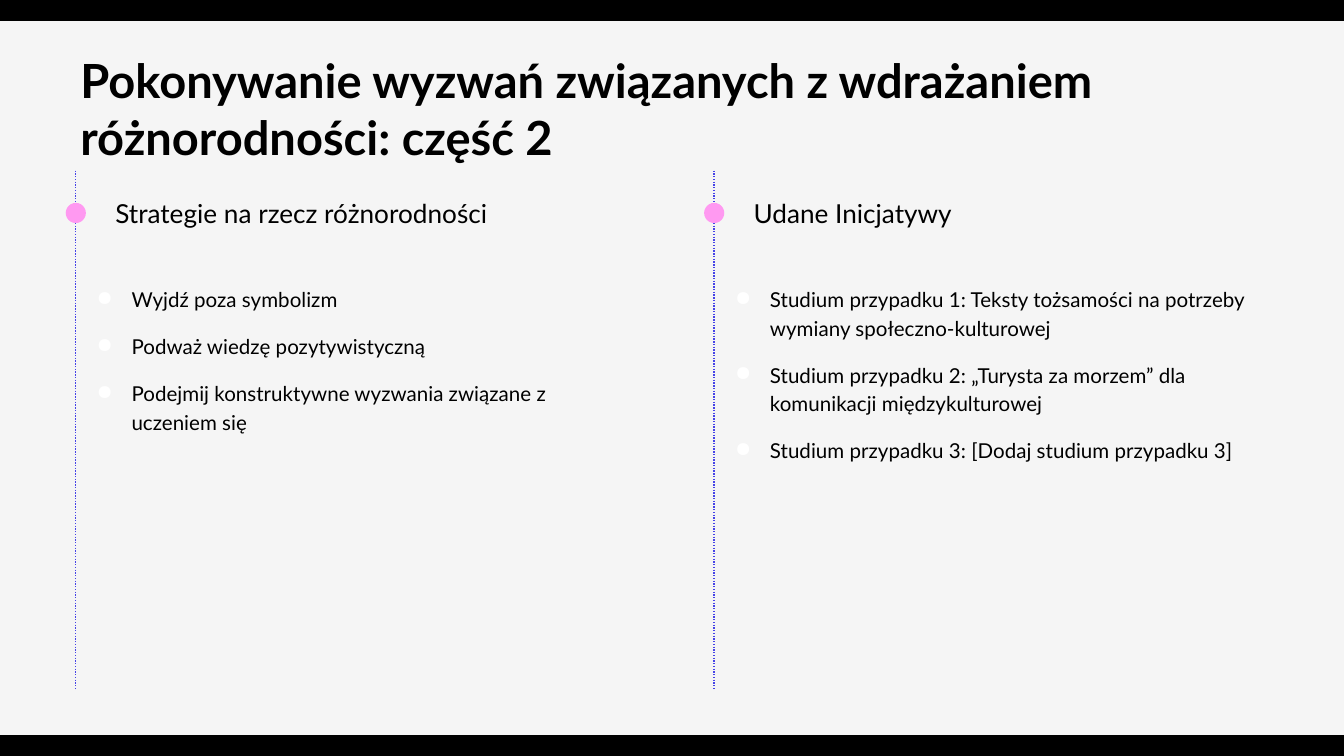
from lxml.etree import SubElement as Sub
from pptx import Presentation
from pptx.dml.color import RGBColor as RGB
from pptx.enum.dml import MSO_LINE as Dash
from pptx.enum.shapes import MSO_CONNECTOR as Conn, MSO_SHAPE as Form
from pptx.enum.text import MSO_ANCHOR as Anchor
from pptx.oxml.ns import qn
from pptx.util import Pt

hues = {"back": "000000", "panel": "FFFFFF", "text": "000000",
        "mark": "FFFFFF", "rule": "4643E7", "dot": "FF99F1"}
cols = [
    ("Strategie na rzecz różnorodności", [
        "Wyjdź poza symbolizm",
        "Podważ wiedzę pozytywistyczną",
        "Podejmij konstruktywne wyzwania związane z uczeniem się"]),
    ("Udane Inicjatywy", [
        "Studium przypadku 1: Teksty tożsamości na potrzeby wymiany społeczno-kulturowej",
        "Studium przypadku 2: „Turysta za morzem” dla komunikacji międzykulturowej",
        "Studium przypadku 3: [Dodaj studium przypadku 3]"]),
]


def add_text(box, lines, size, anchor, bold=False, list_on=False):
    frame = slide.shapes.add_textbox(*map(Pt, box)).text_frame
    look = {"word_wrap": True, "vertical_anchor": anchor}
    look.update({"margin_" + side: Pt(7.2) for side in ("left", "top", "right", "bottom")})
    for key, val in look.items():
        setattr(frame, key, val)
    for i, line in enumerate(lines):
        par = frame.paragraphs[0] if i == 0 else frame.add_paragraph()
        if list_on:
            par.line_spacing = 1.15
            par.space_before = Pt(10 if i else 0)
            props = par._p.get_or_add_pPr()
            props.set("marL", str(Pt(27.4)))
            props.set("indent", str(Pt(-18.7)))
            Sub(Sub(props, qn("a:buClr")), qn("a:srgbClr"), val=hues["mark"])
            Sub(props, qn("a:buChar"), char="●")
        run = par.add_run()
        run.text = line
        for key, val in {"name": "Lato", "size": Pt(size), "bold": bold}.items():
            setattr(run.font, key, val)
        run.font.color.rgb = RGB.from_string(hues["text"])


def add_form(kind, box, hue):
    form = slide.shapes.add_shape(kind, *map(Pt, box))
    form.shadow.inherit = False
    form.fill.solid()
    form.fill.fore_color.rgb = RGB.from_string(hues[hue])
    form.line.fill.background()
    return form


deck = Presentation()
deck.slide_width, deck.slide_height = Pt(720), Pt(405)
slide = deck.slides.add_slide(deck.slide_layouts[6])
slide.background.fill.solid()
slide.background.fill.fore_color.rgb = RGB.from_string(hues["back"])

panel = add_form(Form.RECTANGLE, (-0.5, 11.4, 721, 382.4), "panel")
tint = panel._element.spPr.find(qn("a:solidFill")).find(qn("a:srgbClr"))
Sub(tint, qn("a:alpha"), val="96000")

add_text((36, 35.4, 648, 45.4), ["Pokonywanie wyzwań związanych z wdrażaniem różnorodności: część 2"],
         25.2, Anchor.MIDDLE, bold=True)

for i, (head, items) in enumerate(cols):
    left = 36 + 342 * i
    mid = left + 4.6
    add_text((left, 144.7, 297.4, 215.3), items, 11, Anchor.TOP, list_on=True)
    add_text((left + 18.7, 91.4, 278.6, 45.4), [head], 14, Anchor.MIDDLE)
    rule = slide.shapes.add_connector(Conn.STRAIGHT, Pt(mid), Pt(91.4), Pt(mid), Pt(369.4))
    Sub(rule._element.spPr, qn("a:effectLst"))
    rule.line.color.rgb = RGB.from_string(hues["rule"])
    for key, val in {"width": Pt(0.75), "dash_style": Dash.ROUND_DOT}.items():
        setattr(rule.line, key, val)
    add_form(Form.OVAL, (mid - 5.4, 108.7, 10.8, 10.8), "dot")

deck.save("out.pptx")
